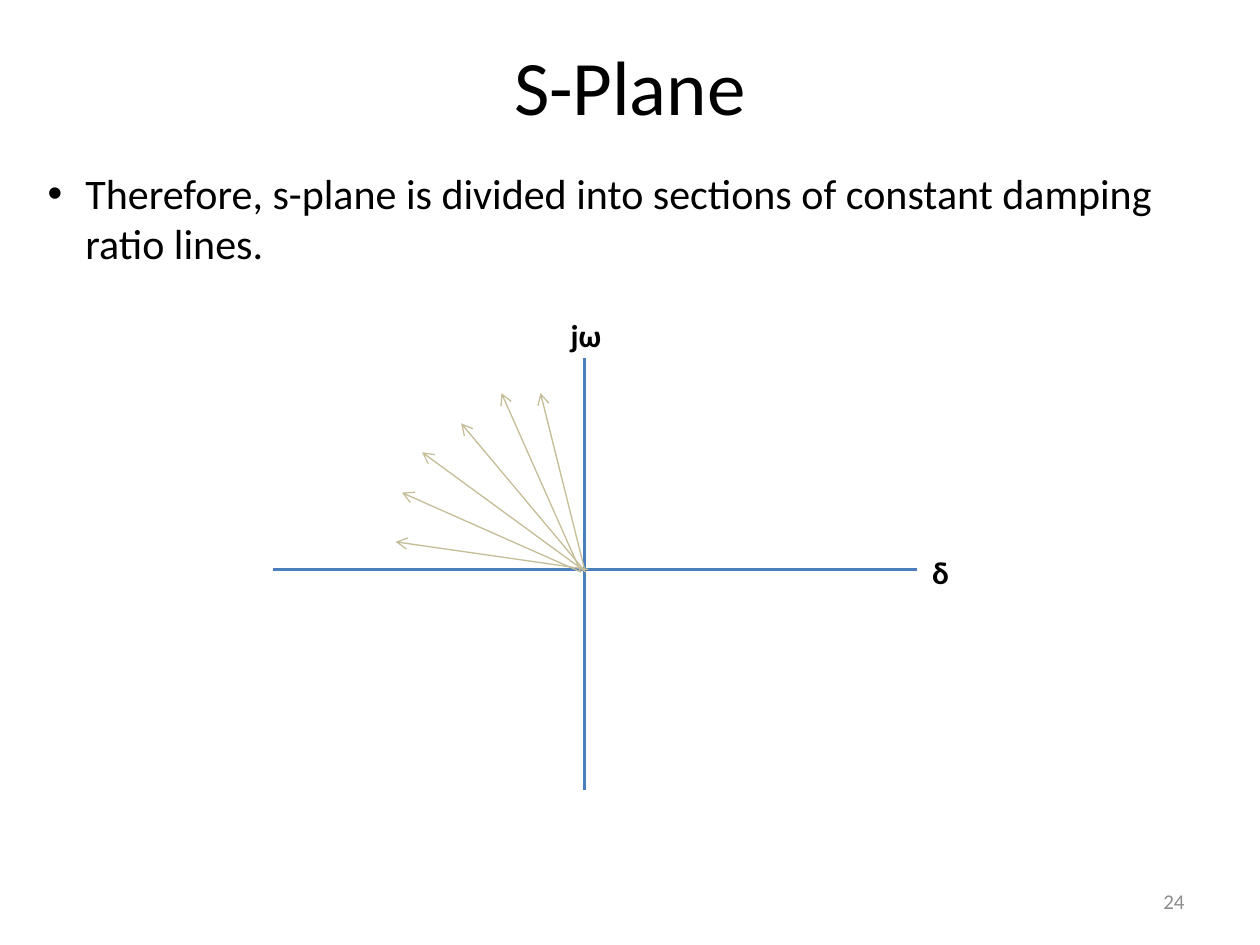
from dataclasses import dataclass

from lxml import etree
from pptx import Presentation
from pptx.dml.color import RGBColor
from pptx.enum import shapes, text
from pptx.oxml.ns import qn
from pptx.util import Inches, Pt

FONT = "Calibri"
BLACK, GREY, BLUE, TAN = "000000", "8C8C8C", "4B7EBC", "C4BD97"


@dataclass
class Label:
    text: str
    left: float
    top: float
    width: float
    height: float
    size: float
    color: str = BLACK
    bold: bool = False
    wrap: bool = True
    align: text.PP_ALIGN = text.PP_ALIGN.LEFT
    anchor: text.MSO_ANCHOR = text.MSO_ANCHOR.TOP
    bullet: bool = False


@dataclass
class Line:
    x1: float
    y1: float
    x2: float
    y2: float
    color: str = TAN
    width: float = 0.75
    arrow: bool = True


TITLE = Label("S-Plane", 0.5, 0.05, 9, 1.25, 44,
              align=text.PP_ALIGN.CENTER, anchor=text.MSO_ANCHOR.MIDDLE)
BODY = Label("Therefore, s-plane is divided into sections of constant damping ratio lines.",
             0.28, 1.28, 9.45, 0.91, 24, bullet=True)
NUMBER = Label("24", 7.17, 6.95, 2.33, 0.4, 12, GREY,
               align=text.PP_ALIGN.RIGHT, anchor=text.MSO_ANCHOR.MIDDLE)
AXES = [
    Line(4.64, 2.84, 4.64, 6.27, BLUE, 1.5, False),
    Line(7.28, 4.52, 2.17, 4.52, BLUE, 1.5, False),
]
AXIS_LABELS = [
    Label("δ", 7.3, 4.34, 0.34, 0.4, 18, bold=True, wrap=False),
    Label("jω", 4.43, 2.46, 0.45, 0.4, 18, bold=True, wrap=False),
]
DAMPING_LINES = [
    Line(4.64, 4.52, 4.29, 3.12),
    Line(4.64, 4.53, 3.66, 3.36),
    Line(4.61, 4.54, 3.98, 3.12),
    Line(4.65, 4.54, 3.35, 3.59),
    Line(4.61, 4.54, 3.19, 3.91),
    Line(4.67, 4.52, 3.14, 4.3),
]


def rgb(value: str) -> RGBColor:
    return RGBColor.from_string(value)


def add_label(parent, label: Label) -> None:
    sp = parent.add_textbox(Inches(label.left), Inches(label.top),
                            Inches(label.width), Inches(label.height))
    tf = sp.text_frame
    tf.word_wrap = label.wrap
    tf.vertical_anchor = label.anchor
    p = tf.paragraphs[0]
    p.text = label.text
    p.alignment = label.align
    p.font.name = FONT
    p.font.size = Pt(label.size)
    p.font.bold = label.bold
    p.font.color.rgb = rgb(label.color)
    if label.bullet:
        add_bullet(p, 0.3)


def add_bullet(p, indent: float) -> None:
    props = p._p.get_or_add_pPr()
    props.set("marL", str(Inches(indent)))
    props.set("indent", str(-Inches(indent)))
    bullet_font = etree.Element(qn("a:buFont"), typeface="Arial")
    bullet = etree.Element(qn("a:buChar"), char="•")
    props.insert(0, bullet_font)
    props.insert(1, bullet)


def add_line(parent, line: Line) -> None:
    cxn = parent.add_connector(shapes.MSO_CONNECTOR.STRAIGHT,
                               Inches(line.x1), Inches(line.y1),
                               Inches(line.x2), Inches(line.y2))
    cxn.line.color.rgb = rgb(line.color)
    cxn.line.width = Pt(line.width)
    if line.arrow:
        etree.SubElement(cxn.line._get_or_add_ln(), qn("a:tailEnd"), type="arrow")
    etree.SubElement(cxn._element.spPr, qn("a:effectLst"))


def main() -> None:
    prs = Presentation()
    prs.slide_width, prs.slide_height = Inches(10), Inches(7.5)
    s = prs.slides.add_slide(prs.slide_layouts[6])

    add_label(s.shapes, TITLE)
    axes = s.shapes.add_group_shape().shapes
    for axis in AXES:
        add_line(axes, axis)
    for label in AXIS_LABELS:
        add_label(axes, label)
    add_label(s.shapes, BODY)
    for line in DAMPING_LINES:
        add_line(s.shapes, line)
    add_label(s.shapes, NUMBER)

    prs.save("out.pptx")


if __name__ == "__main__":
    main()
